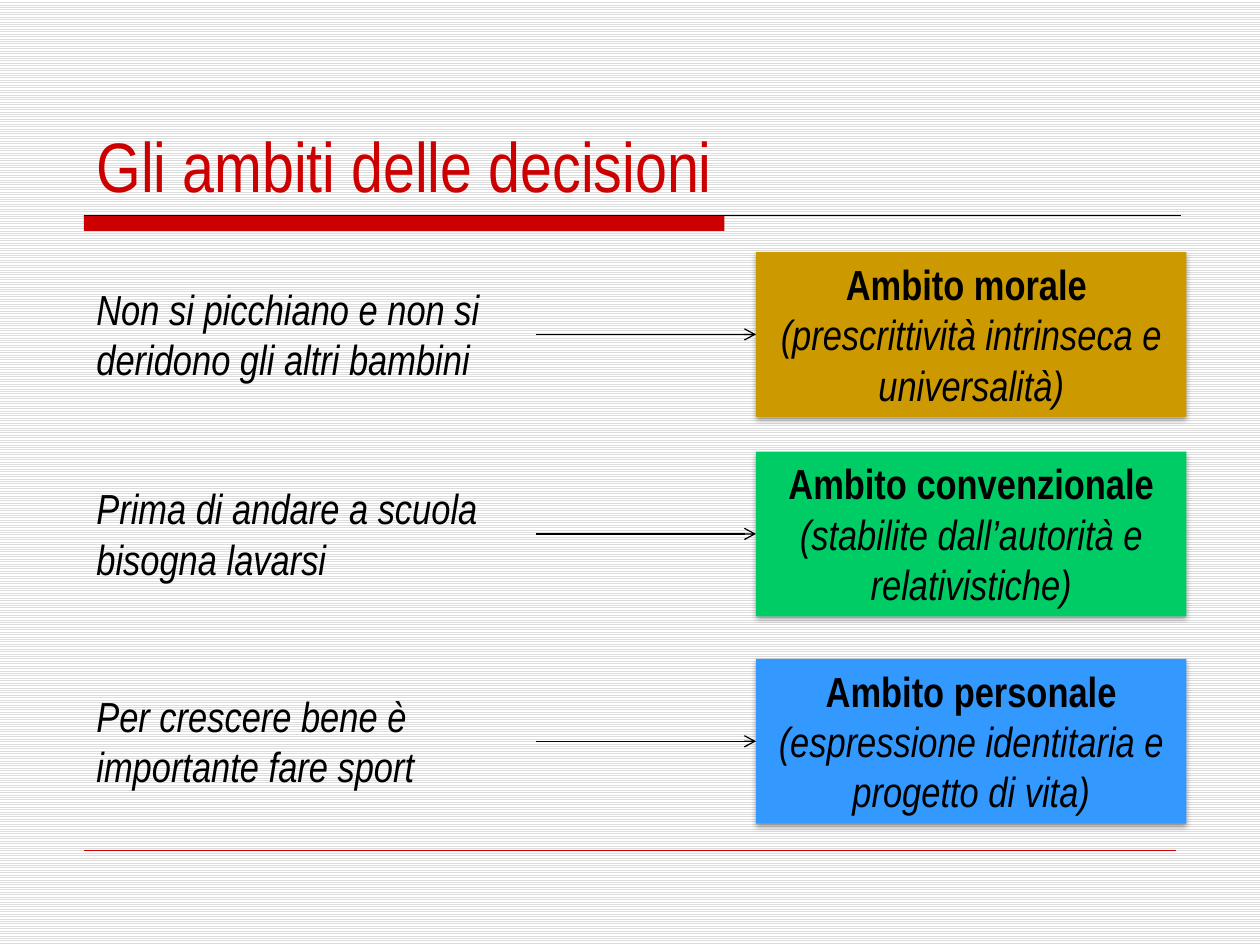
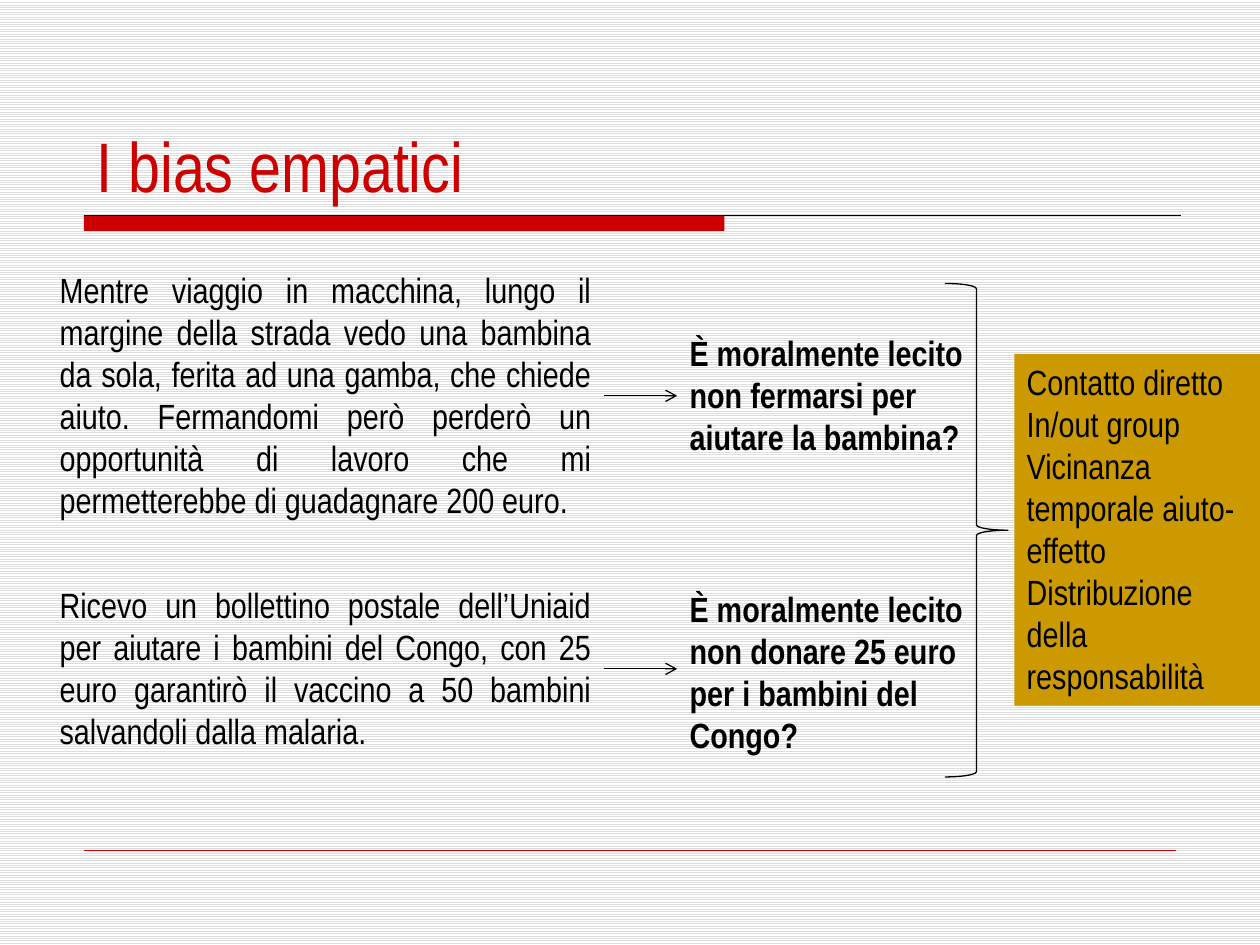
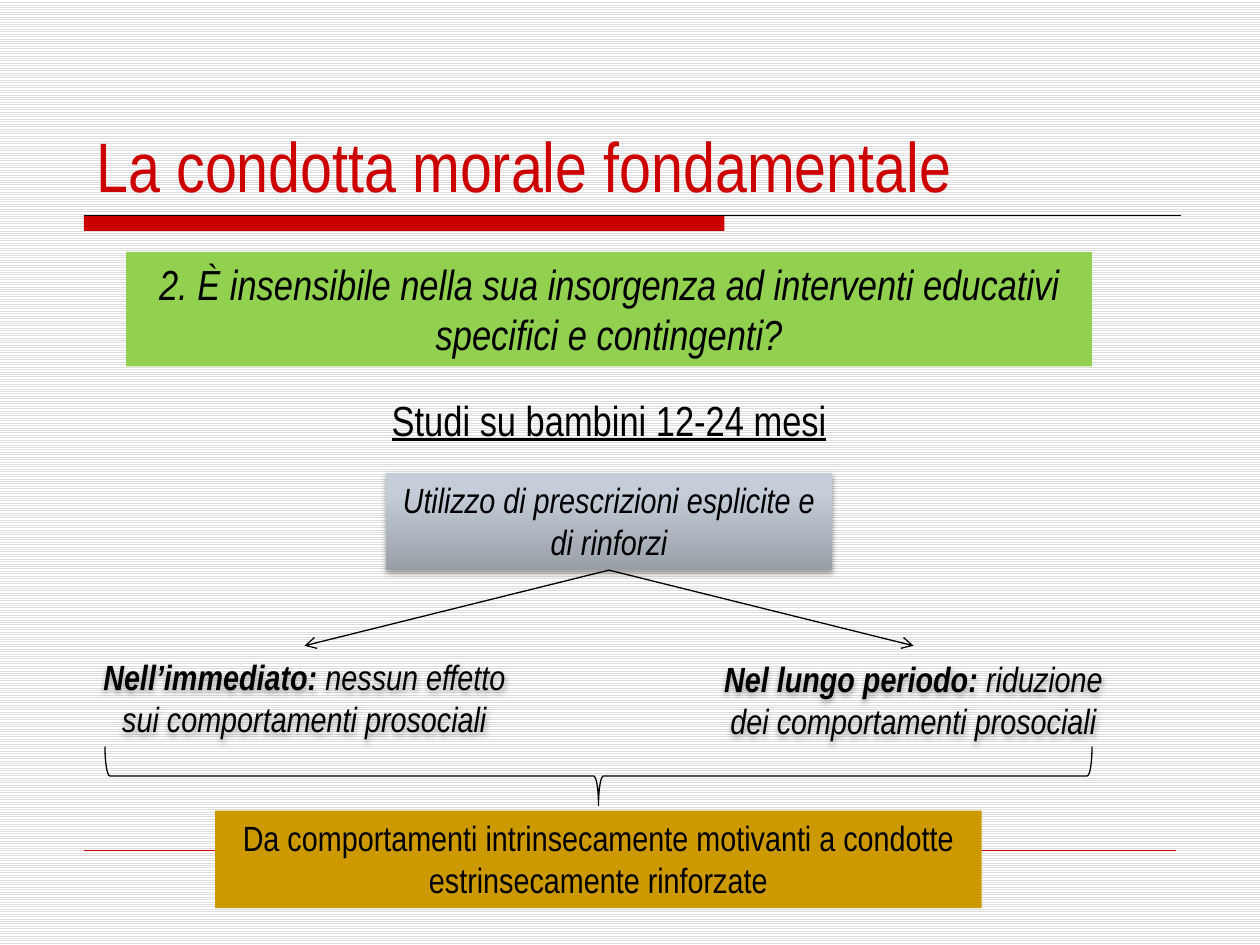
from dataclasses import dataclass
from typing import NamedTuple

from lxml import etree
from pptx import Presentation
from pptx import util as u
from pptx.dml.color import RGBColor
from pptx.enum import dml, shapes, text
from pptx.oxml.ns import qn

FONT = "Arial Narrow"
RED, BLACK, OCHRE = "CC0000", "000000", "CC9900"
GREEN, BLUE, LIME = "00CC66", "3399FF", "92D050"
STEEL = ("989FA7", "C5CED8")
STRIPE, WHITE = "DDDDDD", "FFFFFF"
COLUMNS, ROWS = 120, 90
WIDTH, HEIGHT = u.Inches(10), u.Inches(7.5)
LEFT, CENTER, JUSTIFY = text.PP_ALIGN.LEFT, text.PP_ALIGN.CENTER, text.PP_ALIGN.JUSTIFY


class Area(NamedTuple):
    col: float
    row: float
    cols: float
    rows: float


class Run(NamedTuple):
    text: str
    bold: bool = False
    italic: bool = False
    underline: bool = False


@dataclass
class Box:
    area: Area
    paragraphs: list[list[Run]]
    size: int = 20
    align: text.PP_ALIGN = LEFT
    fill: str | tuple[str, str] | None = None
    shadow: bool = False


class Domain(NamedTuple):
    row: float
    color: str
    statement: str
    name: str
    trait: str


class Dilemma(NamedTuple):
    story: Area
    story_text: str
    question: Area
    question_text: str


class Outcome(NamedTuple):
    area: Area
    period: str
    effect: str


def rgb(value: str) -> RGBColor:
    return RGBColor.from_string(value)


def x(cols: float) -> int:
    return round(WIDTH * cols / COLUMNS)


def y(rows: float) -> int:
    return round(HEIGHT * rows / ROWS)


def place(area: Area) -> tuple[int, int, int, int]:
    return x(area.col), y(area.row), x(area.cols), y(area.rows)


def add_shadow(sp) -> None:
    effects = sp.element.spPr.find(qn("a:effectLst"))
    outer = etree.SubElement(effects, qn("a:outerShdw"), blurRad="40000",
                             dist="23000", dir="5400000", rotWithShape="0")
    color = etree.SubElement(outer, qn("a:srgbClr"), val=BLACK)
    etree.SubElement(color, qn("a:alpha"), val="35000")


def paint(sp, fill: str | tuple[str, str]) -> None:
    if isinstance(fill, str):
        sp.fill.solid()
        sp.fill.fore_color.rgb = rgb(fill)
        return
    sp.fill.gradient()
    sp.fill.gradient_angle = 90
    for stop, color, position in zip(sp.fill.gradient_stops, fill, (0, 0.8)):
        stop.color.rgb = rgb(color)
        stop.position = position


def add_box(s, box: Box) -> None:
    if box.fill:
        sp = s.shapes.add_shape(shapes.MSO_SHAPE.RECTANGLE, *place(box.area))
        paint(sp, box.fill)
        sp.line.fill.background()
    else:
        sp = s.shapes.add_textbox(*place(box.area))
    sp.shadow.inherit = False
    if box.shadow:
        add_shadow(sp)
    tf = sp.text_frame
    tf.word_wrap = True
    tf.auto_size = text.MSO_AUTO_SIZE.SHAPE_TO_FIT_TEXT
    tf.vertical_anchor = text.MSO_ANCHOR.TOP
    for i, runs in enumerate(box.paragraphs):
        p = tf.add_paragraph() if i else tf.paragraphs[0]
        p.alignment = box.align
        for run in runs:
            r = p.add_run()
            r.text = run.text
            r.font.name, r.font.size = FONT, u.Pt(box.size)
            r.font.bold, r.font.italic, r.font.underline = run.bold, run.italic, run.underline
            r.font.color.rgb = rgb(BLACK)


def add_line(s, start: tuple[float, float], end: tuple[float, float],
             color: str = BLACK, width: float = 0.75, arrow: bool = False) -> None:
    line = s.shapes.add_connector(shapes.MSO_CONNECTOR.STRAIGHT,
                                  x(start[0]), y(start[1]), x(end[0]), y(end[1]))
    line.line.color.rgb = rgb(color)
    line.line.width = u.Pt(width)
    spPr = line.element.spPr
    if arrow:
        etree.SubElement(spPr.find(qn("a:ln")), qn("a:tailEnd"), type="arrow")
    etree.SubElement(spPr, qn("a:effectLst"))


def add_brace(s, kind: shapes.MSO_SHAPE, area: Area, rotation: float = 0) -> None:
    sp = s.shapes.add_shape(kind, *place(area))
    sp.rotation = rotation
    sp.fill.background()
    sp.line.color.rgb = rgb(BLACK)
    sp.line.width = u.Pt(0.75)
    sp.shadow.inherit = False


def add_slide(prs, title: str, title_cols: float = 112):
    s = prs.slides.add_slide(prs.slide_layouts[5])
    band = s.shapes.add_shape(shapes.MSO_SHAPE.RECTANGLE, *place(Area(8, 20.5, 61, 1.5)))
    paint(band, RED)
    band.line.fill.background()
    band.shadow.inherit = False
    add_line(s, (8, 20.5), (112.5, 20.5))
    add_line(s, (8, 81), (112, 81), RED, 0.25)
    sp = s.shapes.title
    sp.left, sp.top, sp.width, sp.height = place(Area(8, 11, title_cols, 9.3))
    tf = sp.text_frame
    tf.text = title
    tf.word_wrap = True
    tf.auto_size = text.MSO_AUTO_SIZE.SHAPE_TO_FIT_TEXT
    tf.vertical_anchor = text.MSO_ANCHOR.BOTTOM
    p = tf.paragraphs[0]
    p.alignment = LEFT
    font = p.runs[0].font
    font.name, font.size, font.color.rgb = FONT, u.Pt(40), rgb(RED)
    return s


def domains_slide(prs) -> None:
    s = add_slide(prs, "Gli ambiti delle decisioni")
    height = 15.7
    domains = [
        Domain(24, OCHRE, "Non si picchiano e non si deridono gli altri bambini",
               "Ambito morale ", "(prescrittività intrinseca e universalità)"),
        Domain(43, GREEN, "Prima di andare a scuola bisogna lavarsi",
               "Ambito convenzionale", "(stabilite dall’autorità e relativistiche)"),
        Domain(62.75, BLUE, "Per crescere bene è importante fare sport",
               "Ambito personale", "(espressione identitaria e progetto di vita)"),
    ]
    for d in domains:
        middle = d.row + height / 2
        add_box(s, Box(Area(72, d.row, 41, height),
                       [[Run(d.name, bold=True)], [Run(d.trait, italic=True)]],
                       24, CENTER, d.color, shadow=True))
        add_box(s, Box(Area(8, d.row + 2.4, 43.3, 10.9),
                       [[Run(d.statement, italic=True)]], 24))
        add_line(s, (51, middle), (72, middle), arrow=True)


def bias_slide(prs) -> None:
    s = add_slide(prs, "I bias empatici", 106)
    dilemmas = [
        Dilemma(Area(4.5, 25, 53, 25.4),
                "Mentre viaggio in macchina, lungo il margine della strada vedo una bambina "
                "da sola, ferita ad una gamba, che chiede aiuto. Fermandomi però perderò un "
                "opportunità di lavoro che mi permetterebbe di guadagnare 200 euro.",
                Area(64.5, 31, 31, 13.3),
                "È moralmente lecito non fermarsi per aiutare la bambina?"),
        Dilemma(Area(4.5, 55, 53, 17.4),
                "Ricevo un bollettino postale dell’Uniaid per aiutare i bambini del Congo, "
                "con 25 euro garantirò il vaccino a 50 bambini salvandoli dalla malaria.",
                Area(64.5, 55.4, 31, 17.4),
                "È moralmente lecito non donare 25 euro per i bambini del Congo?"),
    ]
    for d in dilemmas:
        middle = d.story.row + d.story.rows / 2
        add_box(s, Box(d.story, [[Run(d.story_text)]], align=JUSTIFY))
        add_box(s, Box(d.question, [[Run(d.question_text, bold=True)]]))
        add_line(s, (57.5, middle), (64.5, middle), arrow=True)
    add_brace(s, shapes.MSO_SHAPE.RIGHT_BRACE, Area(90, 27, 6, 47))
    factors = ["Contatto diretto", "In/out group", "Vicinanza temporale aiuto-effetto",
               "Distribuzione della responsabilità"]
    add_box(s, Box(Area(96.6, 33.7, 23.4, 33.5), [[Run(f)] for f in factors], fill=OCHRE))


def conduct_slide(prs) -> None:
    s = add_slide(prs, "La condotta morale fondamentale")
    add_box(s, Box(Area(12, 24, 92, 10.9),
                   [[Run("2. È insensibile nella sua insorgenza ad interventi educativi "
                         "specifici e contingenti?", italic=True)]], 24, CENTER, LIME))
    add_box(s, Box(Area(21.5, 37, 73, 6),
                   [[Run("Studi su bambini 12-24 mesi", underline=True)]], 24, CENTER))
    method = Area(36.75, 45, 42.5, 9.3)
    add_box(s, Box(method, [[Run("Utilizzo di prescrizioni esplicite e di rinforzi", italic=True)]],
                   align=CENTER, fill=STEEL, shadow=True))
    outcomes = [
        Outcome(Area(7.75, 61.8, 42.5, 9.3), "Nell’immediato: ",
                "nessun effetto sui comportamenti prosociali"),
        Outcome(Area(65.75, 62, 42.5, 9.3), "Nel lungo periodo: ",
                "riduzione dei comportamenti prosociali"),
    ]
    for o in outcomes:
        add_line(s, (method.col + method.cols / 2, method.row + method.rows),
                 (o.area.col + o.area.cols / 2, 61.5), arrow=True)
        add_box(s, Box(o.area, [[Run(o.period, bold=True, italic=True),
                                 Run(o.effect, italic=True)]], align=CENTER, shadow=True))
    add_brace(s, shapes.MSO_SHAPE.LEFT_BRACE, Area(54.2, 26.9, 5.6, 94), 270)
    add_box(s, Box(Area(20.5, 77.2, 73, 9.3),
                   [[Run("Da comportamenti intrinsecamente motivanti a condotte "
                         "estrinsecamente rinforzate")]], align=CENTER, fill=OCHRE))


def main() -> None:
    prs = Presentation()
    prs.slide_width, prs.slide_height = WIDTH, HEIGHT
    fill = prs.slide_master.background.fill
    fill.patterned()
    fill.pattern = dml.MSO_PATTERN.LIGHT_HORIZONTAL
    fill.fore_color.rgb, fill.back_color.rgb = rgb(STRIPE), rgb(WHITE)
    domains_slide(prs)
    bias_slide(prs)
    conduct_slide(prs)
    prs.save("out.pptx")


if __name__ == "__main__":
    main()
